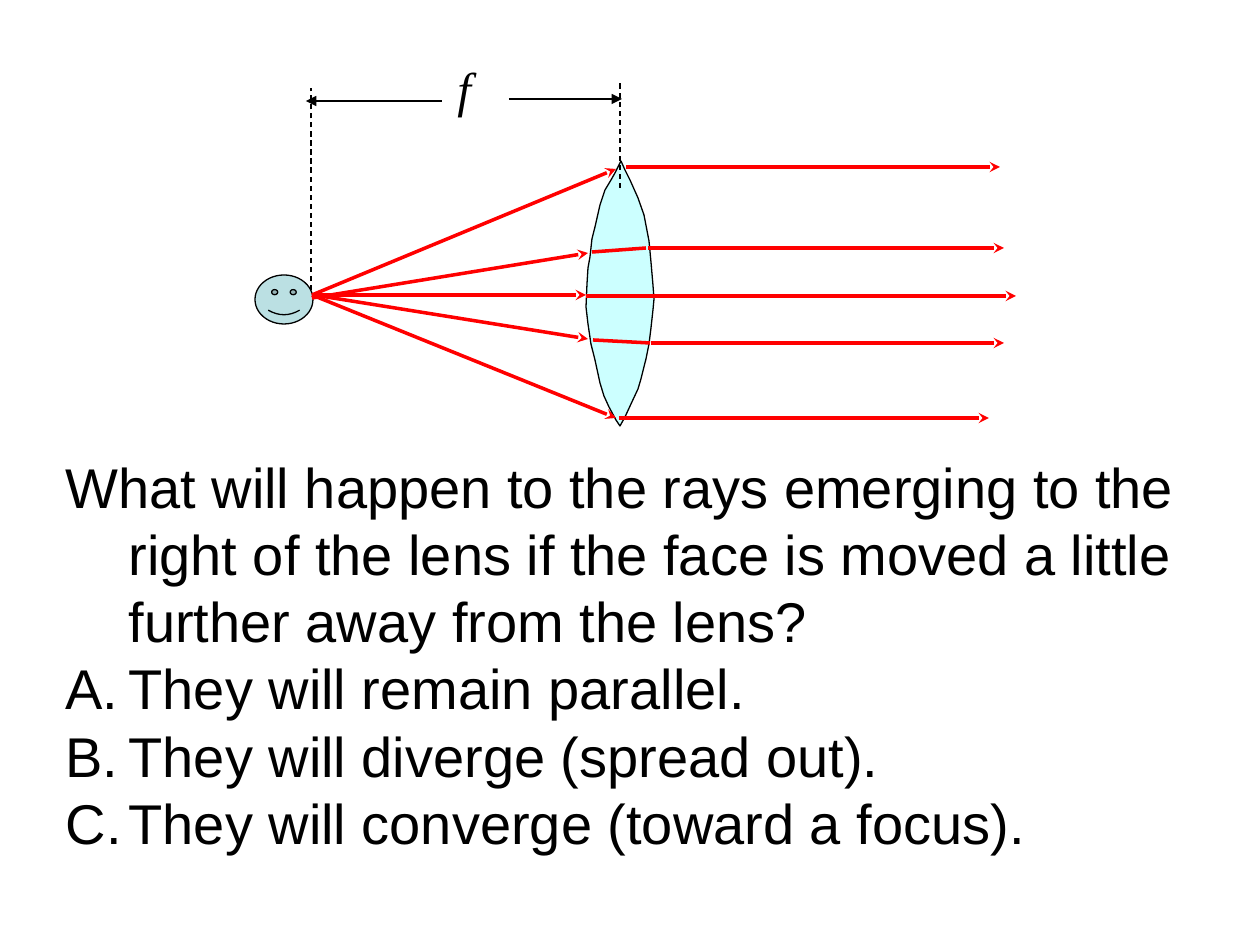
import pptx
import pptx.dml.color
import pptx.enum.dml
import pptx.enum.shapes
import pptx.enum.text
import pptx.oxml
import pptx.util
from dataclasses import dataclass

RGB = pptx.dml.color.RGBColor.from_string
Pt = pptx.util.Pt
EMU_PER_PX = 914400 / 126


@dataclass(frozen=True)
class Theme:
    ink: str = "000000"
    ray: str = "FF0000"
    lens: str = "CCFFFF"
    face: str = "BBE0E3"
    text_font: str = "Arial"
    symbol_font: str = "Times New Roman"
    text_size: int = 32
    line_pitch: float = 38.4
    symbol_size: int = 28
    thin: float = 0.75
    thick: int = 2


theme = Theme()


def px(length):
    return pptx.util.Emu(round(length * EMU_PER_PX))


def add_line(ends, color, width, head=None, dash=None):
    """Draw a straight line from (x1, y1) to (x2, y2), with an arrowhead at its end if named."""
    line = slide.shapes.add_connector(
        pptx.enum.shapes.MSO_CONNECTOR.STRAIGHT, *[px(value) for value in ends])
    line.line.color.rgb = RGB(color)
    line.line.width = Pt(width)
    if dash:
        line.line.dash_style = dash
    if head:
        tail_end = pptx.oxml.parse_xml(
            '<a:tailEnd xmlns:a="http://schemas.openxmlformats.org/drawingml/2006/main"/>')
        tail_end.set("type", head)
        line.line._get_or_add_ln().append(tail_end)
    line._element.spPr.append(pptx.oxml.parse_xml(
        '<a:effectLst xmlns:a="http://schemas.openxmlformats.org/drawingml/2006/main"/>'))


deck = pptx.Presentation()
deck.slide_width = px(1260)
deck.slide_height = px(945)
slide = deck.slides.add_slide(deck.slide_layouts[1])
title = slide.shapes.title._element
title.getparent().remove(title)

# Question and lettered answers
question = slide.placeholders[1]
question.left, question.top, question.width, question.height = px(53), px(446), px(1160), px(416)
frame = question.text_frame
frame.text = "\n".join([
    "What will happen to the rays emerging to the right of the lens"
    " if the face is moved a little further away from the lens?",
    "They will remain parallel.",
    "They will diverge (spread out).",
    "They will converge (toward a focus).",
])
frame.auto_size = pptx.enum.text.MSO_AUTO_SIZE.NONE
for number, para in enumerate(frame.paragraphs):
    para.space_before = Pt(0)
    para.line_spacing = Pt(theme.line_pitch)
    properties = para._p.get_or_add_pPr()
    properties.set("marL", str(px(63)))
    properties.set("indent", str(-px(63)))
    bullet = '<a:buAutoNum type="alphaUcPeriod" {}/>' if number else "<a:buNone {}/>"
    properties.append(pptx.oxml.parse_xml(bullet.format(
        'xmlns:a="http://schemas.openxmlformats.org/drawingml/2006/main"')))
    font = para.runs[0].font
    font.name = theme.text_font
    font.size = Pt(theme.text_size)
    font.color.rgb = RGB(theme.ink)

# Focal length symbol
symbol = slide.shapes.add_textbox(px(445), px(52), px(39), px(72))
symbol.text_frame.text = "f"
font = symbol.text_frame.paragraphs[0].runs[0].font
font.name = theme.symbol_font
font.size = Pt(theme.symbol_size)
font.italic = True
font.color.rgb = RGB(theme.ink)

# Lens outline, up the right side from the bottom tip and down the left
lens_points = [
    (620, 426), (625, 417), (631, 404), (638, 389), (641, 379), (646, 359),
    (649, 344), (651, 328), (653, 310), (654, 299), (653, 285), (651, 262),
    (649, 241), (644, 215), (638, 198), (630, 180), (625, 170), (621, 161),
    (615, 173), (611, 180), (605, 190), (600, 205), (595, 227), (592, 239),
    (590, 257), (588, 268), (587, 284), (586, 307), (588, 324), (591, 344),
    (595, 360), (600, 383), (604, 396), (609, 407), (616, 420),
]
outline = slide.shapes.build_freeform(*lens_points[0], scale=EMU_PER_PX)
outline.add_line_segments(lens_points[1:], close=True)
lens = outline.convert_to_shape()
face = slide.shapes.add_shape(
    pptx.enum.shapes.MSO_SHAPE.SMILEY_FACE, px(255), px(275), px(58), px(49))
face.adjustments[0] = 0.047
for shape, color in ((lens, theme.lens), (face, theme.face)):
    shape.shadow.inherit = False
    shape.fill.solid()
    shape.fill.fore_color.rgb = RGB(color)
    shape.line.color.rgb = RGB(theme.ink)
    shape.line.width = Pt(theme.thin)

# Focal length markers
for ends in ((311, 290, 311, 88), (620, 188, 620, 82)):
    add_line(ends, theme.ink, theme.thin, dash=pptx.enum.dml.MSO_LINE.DASH)
for ends in ((509, 99, 622, 99), (442, 101, 306, 101)):
    add_line(ends, theme.ink, theme.thin, head="triangle")

# Rays from the face to the lens, inside the lens, and out to the right
incoming = [(312, 295, 616, 169), (312, 298, 588, 253), (313, 295, 586, 295),
            (314, 295, 588, 339), (312, 295, 616, 418)]
inside = [(592, 252, 646, 248), (593, 340, 650, 343)]
outgoing = [(626, 167, 1000, 167), (648, 248, 1004, 248), (586, 296, 1016, 296),
            (651, 343, 1004, 343), (619, 418, 989, 418)]
for ends in inside:
    add_line(ends, theme.ray, theme.thick)
for ends in incoming + outgoing:
    add_line(ends, theme.ray, theme.thick, head="stealth")

deck.save("out.pptx")
